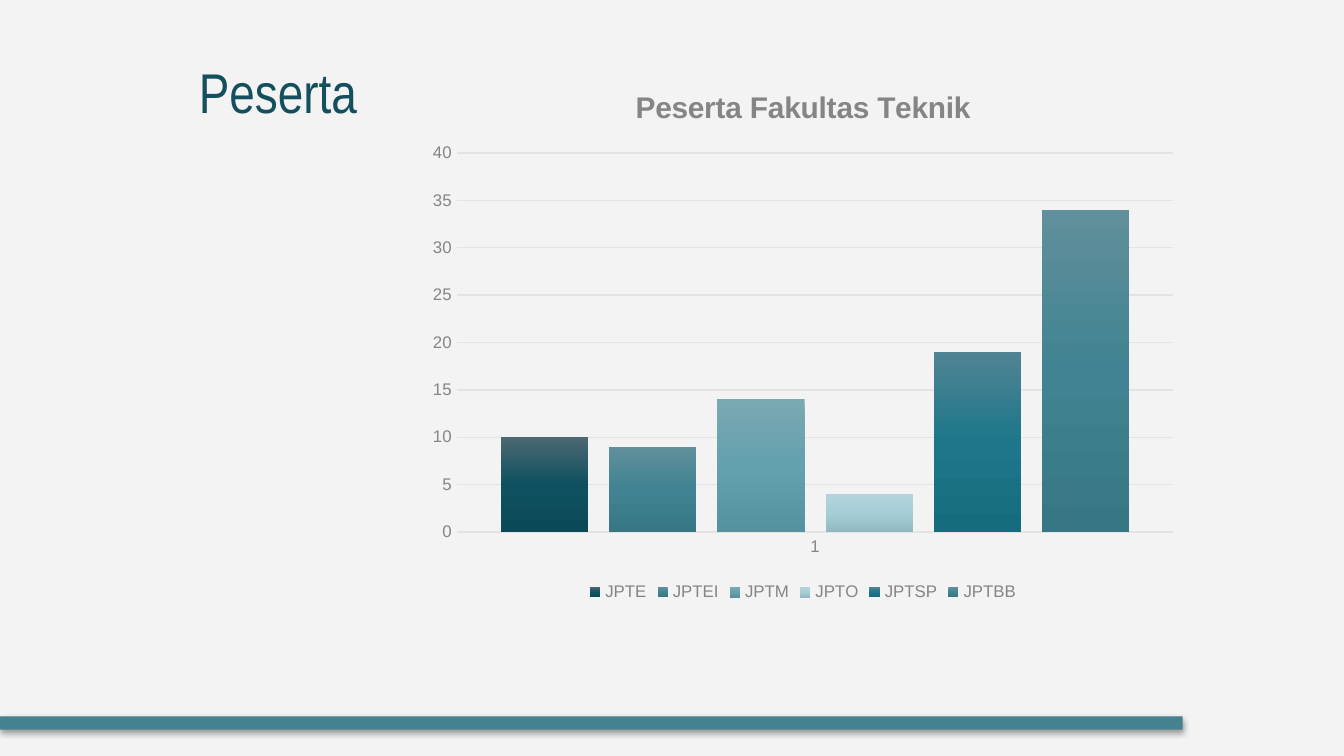
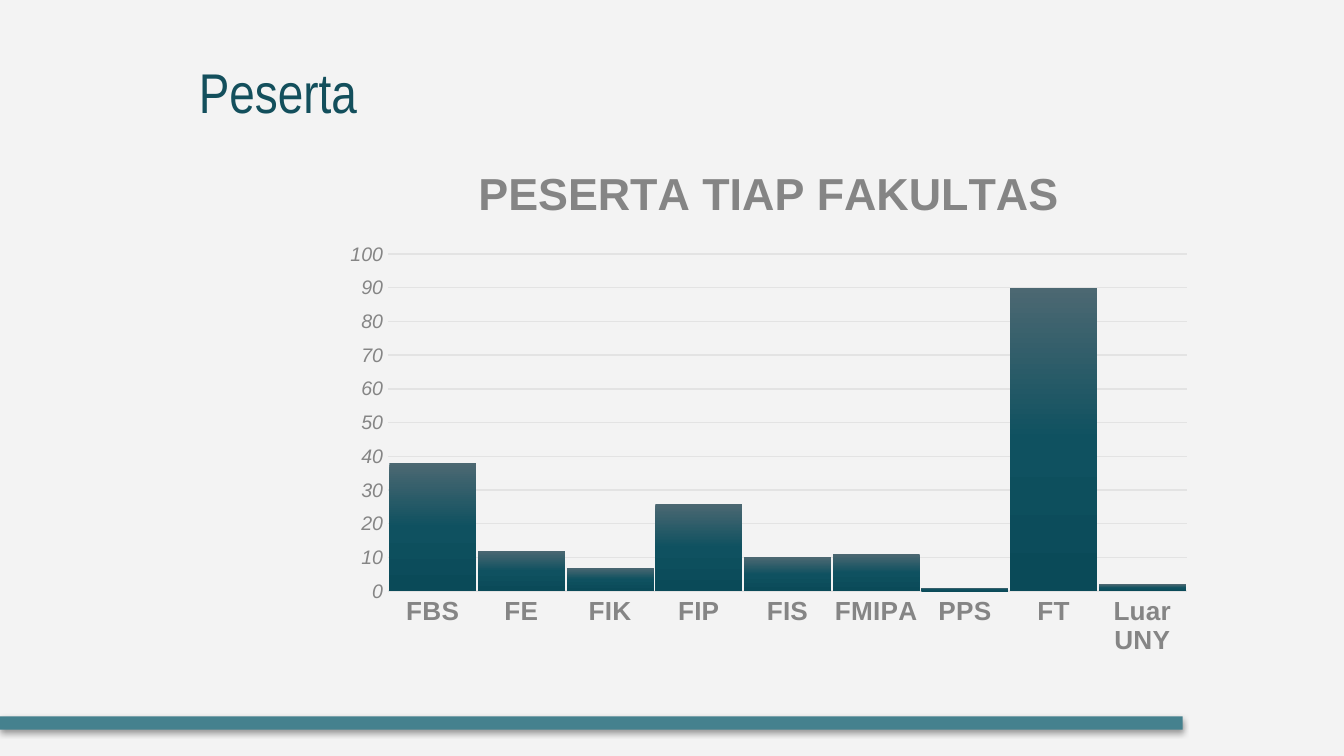
from dataclasses import dataclass
from typing import Optional

from lxml.etree import SubElement
from pptx import Presentation
from pptx.chart.chart import Chart
from pptx.chart.data import CategoryChartData
from pptx.dml.color import RGBColor
from pptx.enum.chart import XL_CHART_TYPE, XL_LEGEND_POSITION, XL_TICK_MARK
from pptx.enum.shapes import MSO_SHAPE
from pptx.enum.text import MSO_ANCHOR, PP_ALIGN
from pptx.oxml import parse_xml
from pptx.oxml.ns import nsdecls, qn
from pptx.slide import Slide
from pptx.util import Inches, Pt


@dataclass(frozen=True)
class Theme:
    background: str = "F3F3F3"
    band: str = "45818E"
    heading: str = "134F5C"
    chart_text: str = "434343"
    label: str = "858585"
    rule: str = "E3E3E3"
    dark: tuple = ("4C6872", "0F5160", "0A4A58")
    teal: tuple = ("60909B", "418392", "377785")
    mist: tuple = ("7AA9B3", "64A0AD", "55919E")
    pale: tuple = ("B3D4DB", "A6CED7", "90B9C2")
    ocean: tuple = ("508494", "1D768A", "156C7F")
    heading_font: str = "Arial Narrow"
    chart_font: str = "Arial"
    heading_size: float = 30
    chart_size: float = 10
    legend_size: float = 9


THEME = Theme()


@dataclass(frozen=True)
class Box:
    left: float
    top: float
    width: float
    height: float


@dataclass(frozen=True)
class Faculty:
    name: str
    counts: tuple
    gradient: tuple


@dataclass(frozen=True)
class LabelStyle:
    size: float
    bold: bool = False
    italic: bool = False


@dataclass(frozen=True)
class ParticipantChart:
    title: str
    title_size: float
    title_at: tuple
    box: Box
    plot: Box
    categories: tuple
    faculties: tuple
    category_style: LabelStyle
    value_style: LabelStyle
    maximum: int
    step: int
    gap: int
    overlap: int
    legend: bool = False


CHARTS = (
    ParticipantChart(
        title="Peserta Fakultas Teknik", title_size=16, title_at=(4.69, 0.62),
        box=Box(3.11, 0.48, 5.73, 4.04), plot=Box(3.4, 1.14, 5.33, 2.82),
        categories=("1",),
        faculties=(
            Faculty("JPTE", (10,), THEME.dark),
            Faculty("JPTEI", (9,), THEME.teal),
            Faculty("JPTM", (14,), THEME.mist),
            Faculty("JPTO", (4,), THEME.pale),
            Faculty("JPTSP", (19,), THEME.ocean),
            Faculty("JPTBB", (34,), THEME.teal),
        ),
        category_style=LabelStyle(9), value_style=LabelStyle(9),
        maximum=40, step=5, gap=100, overlap=-24, legend=True,
    ),
    ParticipantChart(
        title="PESERTA TIAP FAKULTAS", title_size=24, title_at=(3.5, 1.16),
        box=Box(2.47, 1.02, 6.48, 3.94), plot=Box(2.89, 1.89, 5.94, 2.51),
        categories=("FBS", "FE", "FIK", "FIP", "FIS", "FMIPA", "PPS", "FT", "Luar UNY"),
        faculties=(Faculty("Series 1", (38, 12, 7, 26, 10, 11, 1, 90, 2), THEME.dark),),
        category_style=LabelStyle(14, bold=True),
        value_style=LabelStyle(10.5, italic=True),
        maximum=100, step=10, gap=2, overlap=-61,
    ),
)


def rgb(color: str) -> RGBColor:
    return RGBColor.from_string(color)


def format_font(font, *, size: float, color: str = THEME.label,
                name: str = THEME.chart_font, bold: bool = False,
                italic: bool = False) -> None:
    font.size = Pt(size)
    font.name = name
    font.bold = bold
    font.italic = italic
    font.color.rgb = rgb(color)


def write_text(frame, text: str, **style) -> None:
    frame.text = text
    format_font(frame.paragraphs[0].runs[0].font, **style)


def add_master_band(presentation, slide: Slide) -> None:
    band = slide.shapes.add_shape(
        MSO_SHAPE.RECTANGLE, 0, Inches(5.33), Inches(8.8), Inches(0.1))
    band.fill.solid()
    band.fill.fore_color.rgb = rgb(THEME.band)
    band.line.fill.background()
    band._element.spPr.append(parse_xml(
        f'<a:effectLst {nsdecls("a")}>'
        f'<a:outerShdw blurRad="{Pt(3.1)}" dist="{Pt(1.6)}" dir="5400000" rotWithShape="0">'
        '<a:srgbClr val="000000"><a:alpha val="38000"/></a:srgbClr>'
        '</a:outerShdw></a:effectLst>'))
    presentation.slide_master.shapes._spTree.append(band._element)


def add_heading(slide: Slide, text: str) -> None:
    heading = slide.shapes.title
    heading.left, heading.top = Inches(1.38), Inches(0.33)
    heading.width, heading.height = Inches(4.86), Inches(0.86)
    frame = heading.text_frame
    frame.margin_left = frame.margin_right = Inches(0.1)
    frame.margin_top = frame.margin_bottom = Inches(0.1)
    frame.vertical_anchor = MSO_ANCHOR.TOP
    write_text(frame, text, size=THEME.heading_size, color=THEME.heading,
               name=THEME.heading_font)
    frame.paragraphs[0].alignment = PP_ALIGN.LEFT


def set_gradient(bars, colors: tuple) -> None:
    bars.format.fill.solid()
    solid = bars._element.spPr.find(qn("a:solidFill"))
    stops = "".join(
        f'<a:gs pos="{50000 * index}"><a:srgbClr val="{color}"/></a:gs>'
        for index, color in enumerate(colors))
    solid.getparent().replace(solid, parse_xml(
        f'<a:gradFill {nsdecls("a")}><a:gsLst>{stops}</a:gsLst>'
        '<a:lin ang="5400000" scaled="0"/></a:gradFill>'))


def place_in_chart(element, box: Box, left: float, top: float,
                   extent: Optional[tuple] = None) -> None:
    for layout in element.findall(qn("c:layout")):
        element.remove(layout)
    settings = {"xMode": "edge", "yMode": "edge",
                "x": (left - box.left) / box.width,
                "y": (top - box.top) / box.height}
    if extent:
        settings = {"layoutTarget": "inner", **settings,
                    "w": extent[0] / box.width, "h": extent[1] / box.height}
    layout = parse_xml(f'<c:layout {nsdecls("c")}><c:manualLayout/></c:layout>')
    for name, value in settings.items():
        SubElement(layout[0], qn(f"c:{name}")).set("val", str(value))
    text = element.find(qn("c:tx"))
    element.insert(0 if text is None else 1, layout)


def style_axes(chart: Chart, content: ParticipantChart) -> None:
    for axis, style in ((chart.category_axis, content.category_style),
                        (chart.value_axis, content.value_style)):
        axis.major_tick_mark = axis.minor_tick_mark = XL_TICK_MARK.NONE
        format_font(axis.tick_labels.font, size=style.size,
                    bold=style.bold, italic=style.italic)
    counts = chart.value_axis
    counts.minimum_scale, counts.maximum_scale = 0, content.maximum
    counts.major_unit = content.step
    counts.format.line.fill.background()
    for line, width in ((chart.category_axis.format.line, 1),
                        (counts.major_gridlines.format.line, 0.75)):
        line.color.rgb = rgb(THEME.rule)
        line.width = Pt(width)


def add_participant_chart(slide: Slide, content: ParticipantChart) -> None:
    participants = CategoryChartData()
    participants.categories = content.categories
    for faculty in content.faculties:
        participants.add_series(faculty.name, faculty.counts)
    box, plot_box = content.box, content.plot
    chart = slide.shapes.add_chart(
        XL_CHART_TYPE.COLUMN_CLUSTERED, Inches(box.left), Inches(box.top),
        Inches(box.width), Inches(box.height), participants).chart
    format_font(chart.font, size=THEME.chart_size, color=THEME.chart_text)
    write_text(chart.chart_title.text_frame, content.title,
               size=content.title_size, bold=True)
    chart.chart_title.include_in_layout = False
    place_in_chart(chart.chart_title._element, box, *content.title_at)
    place_in_chart(chart._chartSpace.chart.plotArea, box, plot_box.left,
                   plot_box.top, (plot_box.width, plot_box.height))
    bars = chart.plots[0]
    bars.gap_width, bars.overlap = content.gap, content.overlap
    bars.vary_by_categories = False
    for series, faculty in zip(bars.series, content.faculties):
        set_gradient(series, faculty.gradient)
    style_axes(chart, content)
    chart.has_legend = content.legend
    if content.legend:
        chart.legend.position = XL_LEGEND_POSITION.BOTTOM
        chart.legend.include_in_layout = False
        format_font(chart.legend.font, size=THEME.legend_size)


def main() -> None:
    presentation = Presentation()
    presentation.slide_width = Inches(10)
    presentation.slide_height = presentation.slide_width * 9 // 16
    background = presentation.slide_master.background.fill
    background.solid()
    background.fore_color.rgb = rgb(THEME.background)
    title_only = presentation.slide_layouts.get_by_name("Title Only")
    for content in CHARTS:
        slide = presentation.slides.add_slide(title_only)
        if content is CHARTS[0]:
            add_master_band(presentation, slide)
        add_heading(slide, "Peserta")
        add_participant_chart(slide, content)
    presentation.save("out.pptx")


if __name__ == "__main__":
    main()
